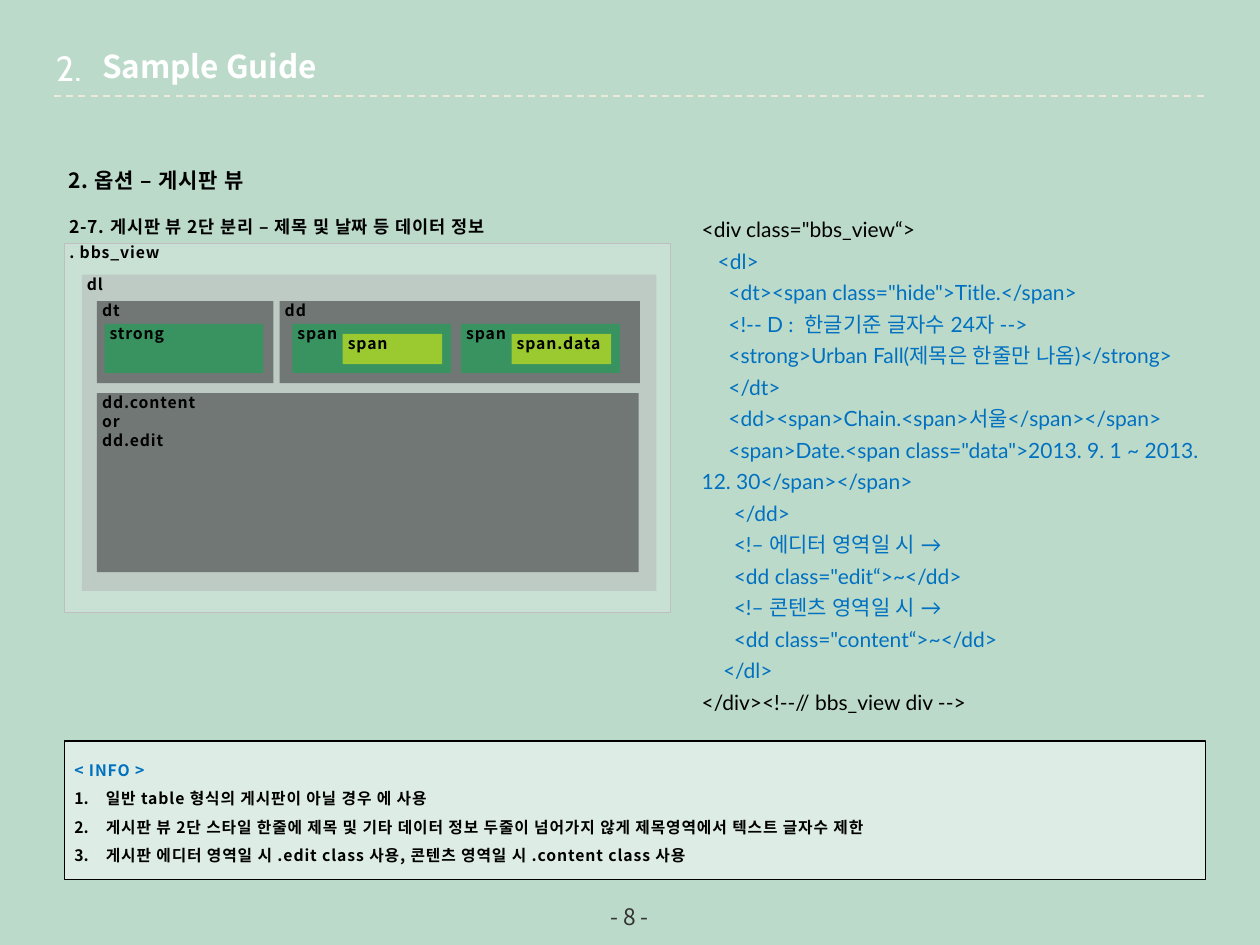
from dataclasses import dataclass

import pptx
import pptx.dml.color
import pptx.enum.dml
import pptx.enum.shapes
import pptx.enum.text
import pptx.oxml.ns
import pptx.util
from lxml import etree

ALIGN = pptx.enum.text.PP_ALIGN
ANCHOR = pptx.enum.text.MSO_ANCHOR
COLUMNS, ROWS = 100, 75
CELL = pptx.util.Inches(0.1)


@dataclass(frozen=True)
class Theme:
    sans: str = "Noto Sans CJK KR"
    code: str = "Lato"
    number: str = "Cabin"
    background: str = "BBDACA"
    white: str = "FFFFFF"
    black: str = "000000"
    blue: str = "0070C0"
    page: str = "333333"
    rule: str = "ECE9DA"
    frame: str = "BFBFBF"
    silver: str = "B5B5B5"
    dark: str = "262626"
    green: str = "00B050"
    yellow: str = "FFFF00"
    small: float = 9
    medium: float = 10
    large: float = 12
    footer: float = 13
    title: float = 18
    chapter: float = 20


THEME = Theme()


@dataclass(frozen=True)
class Box:
    """A rectangle in grid columns and rows."""
    left: float
    top: float
    width: float
    height: float

    def inside(self, left, top, width, height):
        return Box(self.left + left, self.top + top, width, height)

    def lengths(self):
        return [round(value * CELL) for value in
                (self.left, self.top, self.width, self.height)]


def rgb(value):
    return pptx.dml.color.RGBColor.from_string(value)


def add_child(parent, tag, **attributes):
    return etree.SubElement(parent, pptx.oxml.ns.qn(tag), attributes)


def set_frame(shape, insets=(0.1, 0.05, 0.1, 0.05), anchor=ANCHOR.TOP):
    frame = shape.text_frame
    frame.word_wrap = True
    frame.auto_size = pptx.enum.text.MSO_AUTO_SIZE.NONE
    frame.vertical_anchor = anchor
    (frame.margin_left, frame.margin_top,
     frame.margin_right, frame.margin_bottom) = map(pptx.util.Inches, insets)


def write(paragraph, text, *, size=THEME.small, font=THEME.sans, color=THEME.black,
          bold=False, spacing=0, align=ALIGN.LEFT, line_spacing=None):
    paragraph.alignment = align
    paragraph.space_before = pptx.util.Pt(0)
    if line_spacing:
        paragraph.line_spacing = line_spacing
    run = paragraph.add_run()
    run.text = text
    run.font.size = pptx.util.Pt(size)
    run.font.bold = bold
    run.font.color.rgb = rgb(color)
    run.font.name = font
    properties = run.font._element
    add_child(properties, "a:ea", typeface=font)
    if spacing:
        properties.set("spc", str(round(spacing * 100)))


def write_lines(shape, lines, **text_format):
    frame = shape.text_frame
    for index, line in enumerate(lines):
        paragraph = frame.add_paragraph() if index else frame.paragraphs[0]
        write(paragraph, line, **text_format)


def set_fill(shape, color, opacity):
    shape.fill.solid()
    shape.fill.fore_color.rgb = rgb(color)
    color_element = shape._element.spPr.find(".//" + pptx.oxml.ns.qn("a:srgbClr"))
    add_child(color_element, "a:alpha", val=str(opacity * 1000))


def set_line(shape, color, width):
    shape.line.color.rgb = rgb(color)
    shape.line.width = pptx.util.Pt(width)


def add_text(slide, box, text, insets=(0.1, 0.05, 0.1, 0.05), anchor=ANCHOR.TOP,
             **text_format):
    shape = slide.shapes.add_textbox(*box.lengths())
    set_frame(shape, insets, anchor)
    write(shape.text_frame.paragraphs[0], text, **text_format)


def add_block(slide, box, lines, color, opacity=50):
    """Add a translucent element of the diagram with its label at top left."""
    shape = slide.shapes.add_shape(
        pptx.enum.shapes.MSO_SHAPE.RECTANGLE, *box.lengths())
    shape.shadow.inherit = False
    set_fill(shape, color, opacity)
    shape.line.fill.background()
    set_frame(shape, (0.04, 0, 0, 0))
    write_lines(shape, lines, bold=True, spacing=0.5)
    return shape


def add_header(slide, box):
    add_text(slide, box.inside(-1.6, 0, 5.5, 4.4), "2.", size=THEME.chapter,
             font=THEME.number, color=THEME.white, align=ALIGN.CENTER)
    title = slide.shapes.title
    title.left, title.top, title.width, title.height = box.inside(
        2.8, 0, 46.1, 4).lengths()
    set_frame(title)
    write(title.text_frame.paragraphs[0], "Sample Guide", size=THEME.title,
          color=THEME.white, bold=True)
    left, top, width, height = box.lengths()
    rule = slide.shapes.add_connector(
        pptx.enum.shapes.MSO_CONNECTOR.STRAIGHT,
        left, top + height, left + width, top + height)
    set_line(rule, THEME.rule, 1)
    rule.line.dash_style = pptx.enum.dml.MSO_LINE.DASH
    add_child(rule._element.spPr, "a:effectLst")


def add_headings(slide, box):
    heading = dict(insets=(0.04, 0, 0, 0), bold=True, spacing=0.5, line_spacing=1.5)
    add_text(slide, box.inside(0, 0, box.width, 3), "2. 옵션 – 게시판 뷰",
             size=THEME.large, **heading)
    add_text(slide, box.inside(0.1, 4, box.width, 2.5),
             "2-7. 게시판 뷰 2단 분리 – 제목 및 날짜 등 데이터 정보",
             size=THEME.medium, **heading)


def add_diagram(slide, box):
    outer = add_block(slide, box, [". bbs_view"], THEME.white, opacity=20)
    set_line(outer, THEME.frame, 0.25)
    dl = box.inside(1.4, 2.5, 45.6, 25.1)
    dt = dl.inside(1.2, 2.1, 14, 6.5)
    dd = dl.inside(15.7, 2.1, 28.6, 6.5)
    add_block(slide, dl, ["dl"], THEME.silver)
    add_block(slide, dt, ["dt"], THEME.dark)
    add_block(slide, dt.inside(0.6, 1.8, 12.6, 3.9), ["strong"], THEME.green)
    add_block(slide, dd, ["dd"], THEME.dark)
    for index, label in enumerate(["span", "span.data"]):
        span = dd.inside(1 + index * 13.4, 1.8, 12.6, 3.9)
        add_block(slide, span, ["span"], THEME.green)
        add_block(slide, span.inside(4, 0.8, 7.9, 2.4), [label], THEME.yellow)
    add_block(slide, dl.inside(1.2, 9.4, 43, 14.2),
              ["dd.content", "or", "dd.edit"], THEME.dark)


def add_code(slide, box):
    lines = [
        '<div class="bbs_view“>',
        '   <dl>',
        '     <dt><span class="hide">Title.</span>',
        '     <!-- D :  한글기준 글자수 24자 -->',
        '     <strong>Urban Fall(제목은 한줄만 나옴)</strong>',
        '     </dt>',
        '     <dd><span>Chain.<span>서울</span></span>',
        '     <span>Date.<span class="data">2013. 9. 1 ~ 2013. 12. 30</span></span>',
        '      </dd>',
        '      <!– 에디터 영역일 시 →',
        '      <dd class="edit“>~</dd>',
        '      <!– 콘텐츠 영역일 시 →',
        '      <dd class="content“>~</dd>',
        '    </dl>',
        '</div><!--// bbs_view div -->',
    ]
    shape = slide.shapes.add_textbox(*box.lengths())
    set_frame(shape)
    write_lines(shape, lines, size=THEME.large, font=THEME.code, color=THEME.blue,
                line_spacing=pptx.util.Pt(18))
    for paragraph in (shape.text_frame.paragraphs[0], shape.text_frame.paragraphs[-1]):
        paragraph.runs[0].font.color.rgb = rgb(THEME.black)


def add_info(slide, box):
    notes = [
        "일반 table 형식의 게시판이 아닐 경우 에 사용",
        "게시판 뷰 2단 스타일 한줄에 제목 및 기타 데이터 정보 두줄이 넘어가지 않게 "
        "제목영역에서 텍스트 글자수 제한",
        "게시판 에디터 영역일 시 .edit class 사용, 콘텐츠 영역일 시 .content class 사용",
    ]
    body = slide.placeholders[1]
    body.left, body.top, body.width, body.height = box.lengths()
    set_fill(body, THEME.white, 50)
    set_line(body, THEME.black, 0.75)
    set_frame(body, (0.08, 0.08, 0.08, 0))
    write_lines(body, ["< INFO >"] + notes, bold=True, spacing=0.5, line_spacing=1.5)
    heading, *items = body.text_frame.paragraphs
    heading.runs[0].font.color.rgb = rgb(THEME.blue)
    indent = pptx.util.Inches(0.25)
    for paragraph in [heading] + items:
        properties = paragraph._p.get_or_add_pPr()
        hanging = 0 if paragraph is heading else indent
        properties.set("marL", str(hanging))
        properties.set("indent", str(-hanging))
        if hanging:
            add_child(properties, "a:buFont", typeface="+mj-lt")
            add_child(properties, "a:buAutoNum", type="arabicPeriod")
        else:
            add_child(properties, "a:buNone")


def main():
    presentation = pptx.Presentation()
    presentation.slide_width, presentation.slide_height = COLUMNS * CELL, ROWS * CELL
    slide = presentation.slides.add_slide(presentation.slide_layouts[1])
    slide.background.fill.solid()
    slide.background.fill.fore_color.rgb = rgb(THEME.background)
    add_header(slide, Box(4.3, 3.2, 91.4, 4.4))
    add_headings(slide, Box(5, 12.3, 40, 6.5))
    add_diagram(slide, Box(5.1, 19.3, 48.1, 29.3))
    add_code(slide, Box(54.7, 16.2, 42.5, 41.4))
    add_info(slide, Box(5.1, 58.8, 90.6, 11))
    add_text(slide, Box(38.3, 71.2, 23.3, 3.1), "- 8 -", (0, 0, 0, 0), ANCHOR.MIDDLE,
             size=THEME.footer, color=THEME.page, align=ALIGN.CENTER)
    presentation.save("out.pptx")


if __name__ == "__main__":
    main()
